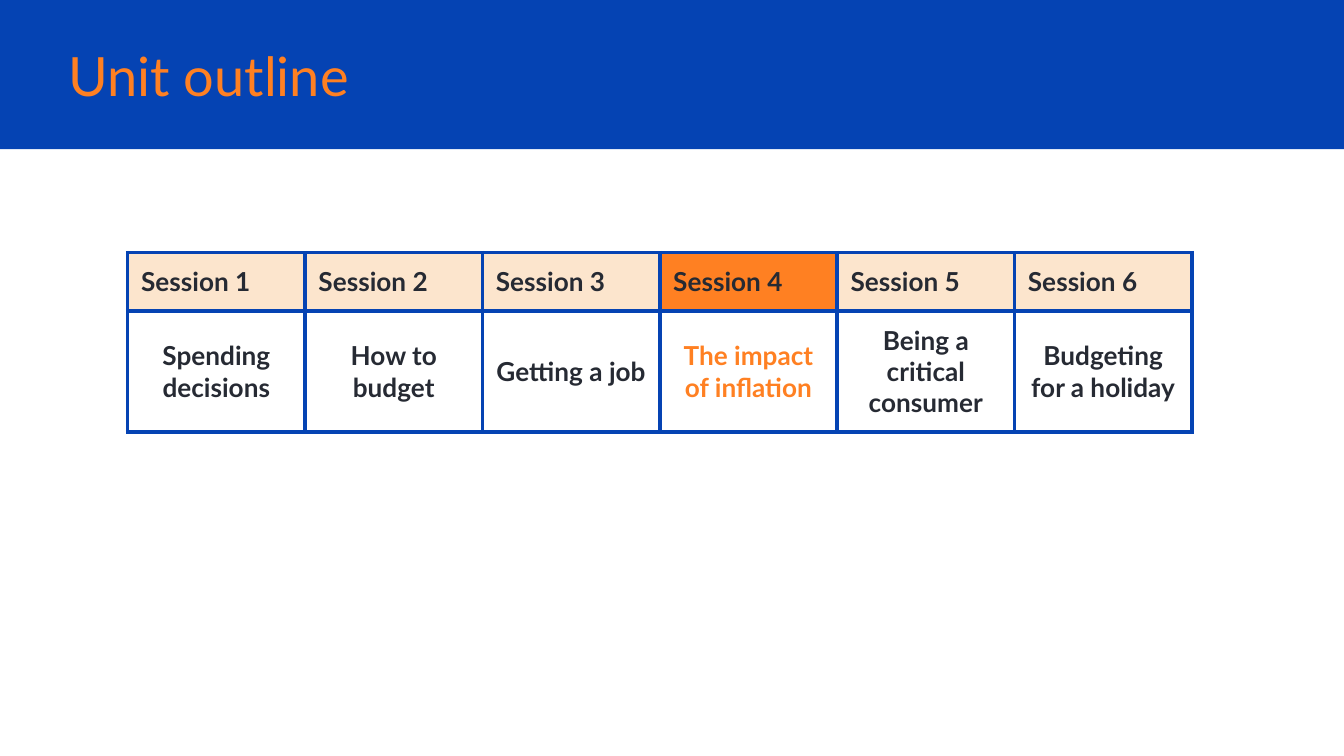
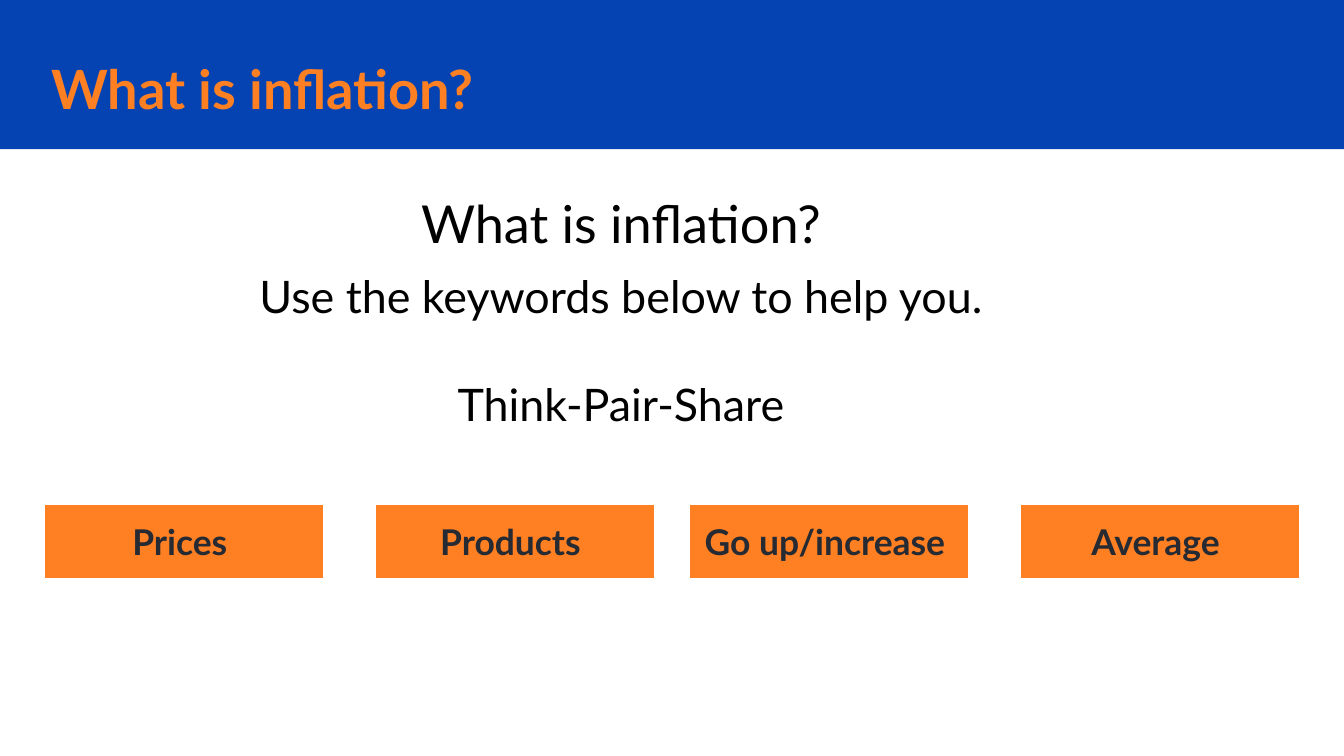
from dataclasses import dataclass

import pptx
import pptx.util
import pptx.oxml
import pptx.oxml.ns
import pptx.dml.color
import pptx.enum.shapes
import pptx.enum.text
from pptx.util import Inches, Pt

HUES = {
    "blue": "0543B3",
    "orange": "FF8022",
    "peach": "FCE5CD",
    "ink": "262A33",
    "black": "000000",
    "white": "FFFFFF",
}
FONT = "Lato"
PAD = Inches(0.1)
ALIGN = pptx.enum.text.PP_ALIGN
ANCHOR = pptx.enum.text.MSO_ANCHOR
RECT = pptx.enum.shapes.MSO_SHAPE.RECTANGLE


@dataclass(frozen=True)
class Box:
    left: float
    top: float
    width: float
    height: float

    def lengths(self) -> tuple:
        return tuple(Inches(n) for n in (self.left, self.top, self.width, self.height))


@dataclass(frozen=True)
class Style:
    size: float
    hue: str
    bold: bool = False
    align: ALIGN = ALIGN.CENTER


@dataclass(frozen=True)
class Session:
    topic: str
    current: bool = False


SESSIONS = (
    Session("Spending decisions"),
    Session("How to budget"),
    Session("Getting a job"),
    Session("The impact of inflation", current=True),
    Session("Being a critical consumer"),
    Session("Budgeting for a holiday"),
)
KEYWORDS = ("Prices ", "Products ", "Go up/increase ", "Average ")


def color(hue: str) -> pptx.dml.color.RGBColor:
    return pptx.dml.color.RGBColor.from_string(HUES[hue])


def paint(part, hue: str) -> None:
    part.fill.solid()
    part.fill.fore_color.rgb = color(hue)


def set_frame(frame, anchor) -> None:
    frame.word_wrap = True
    frame.auto_size = pptx.enum.text.MSO_AUTO_SIZE.NONE
    frame.vertical_anchor = anchor
    frame.margin_left = frame.margin_right = PAD
    frame.margin_top = frame.margin_bottom = PAD


def write(para, text: str, style: Style) -> None:
    para.alignment = style.align
    run = para.add_run()
    run.text = text
    run.font.name = FONT
    run.font.size = Pt(style.size)
    run.font.bold = style.bold
    run.font.color.rgb = color(style.hue)


def add_rect(slide, box: Box, hue: str):
    rect = slide.shapes.add_shape(RECT, *box.lengths())
    rect.shadow.inherit = False
    paint(rect, hue)
    rect.line.fill.background()
    return rect


def add_page(deck, title: str, box: Box, anchor, bold: bool = False):
    """Add a slide with the blue band behind its orange title."""
    slide = deck.slides.add_slide(deck.slide_layouts[5])
    band = add_rect(slide, Box(0, 0, 10, 1.11), "blue").element
    band.getparent().insert(2, band)
    head = slide.shapes.title
    head.left, head.top, head.width, head.height = box.lengths()
    set_frame(head.text_frame, anchor)
    write(head.text_frame.paragraphs[0], title, Style(29, "orange", bold, ALIGN.LEFT))
    return slide


def add_text(slide, box: Box, lines: tuple, size: float, gap: float = 0) -> None:
    """Add centred lines, with a gap in points between them."""
    frame = slide.shapes.add_textbox(*box.lengths()).text_frame
    set_frame(frame, ANCHOR.TOP)
    for i, line in enumerate(lines):
        para = frame.add_paragraph() if i else frame.paragraphs[0]
        if i:
            para.space_before = Pt(gap)
        write(para, line, Style(size, "black"))


def add_edges(cell) -> None:
    props = cell._tc.get_or_add_tcPr()
    for side in ("lnL", "lnR", "lnT", "lnB"):
        props.append(pptx.oxml.parse_xml(
            f'<a:{side} {pptx.oxml.ns.nsdecls("a")} w="{Pt(2.25)}">'
            f'<a:solidFill><a:srgbClr val="{HUES["blue"]}"/></a:solidFill>'
            f'</a:{side}>'))


def fill_cell(cell, text: str, style: Style, anchor) -> None:
    cell.margin_left = cell.margin_right = PAD
    cell.margin_top = cell.margin_bottom = PAD
    cell.vertical_anchor = anchor
    add_edges(cell)
    write(cell.text_frame.paragraphs[0], text, style)


def add_plan(slide) -> None:
    count = len(SESSIONS)
    box = Box(0.95, 1.88, 1.32 * count, 1.33)
    table = slide.shapes.add_table(2, count, *box.lengths()).table
    table.first_row = table.horz_banding = False
    for row, height in zip(table.rows, (0.43, 0.9)):
        row.height = Inches(height)
    for i, item in enumerate(SESSIONS):
        table.columns[i].width = Inches(1.32)
        head, body = table.cell(0, i), table.cell(1, i)
        fill_cell(head, f"Session {i + 1}", Style(14, "ink", True, ALIGN.LEFT), ANCHOR.TOP)
        paint(head, "orange" if item.current else "peach")
        hue = "orange" if item.current else "ink"
        fill_cell(body, item.topic, Style(14, hue, True), ANCHOR.MIDDLE)
        body.fill.background()


def add_keys(slide) -> None:
    """Draw the keywords as two pairs of boxes."""
    for i, word in enumerate(KEYWORDS):
        pair, side = divmod(i, 2)
        rect = add_rect(slide, Box(0.33 + 4.8 * pair + 2.46 * side, 3.75, 2.08, 0.56), "orange")
        rect.line.color.rgb = color("white")
        rect.line.width = Pt(0.75)
        set_frame(rect.text_frame, ANCHOR.MIDDLE)
        write(rect.text_frame.paragraphs[0], word, Style(19, "ink", True))


def main() -> None:
    deck = pptx.Presentation()
    deck.slide_width = Inches(10)
    deck.slide_height = deck.slide_width * 9 // 16

    plan = add_page(deck, "Unit outline", Box(0.41, 0.28, 8.46, 0.56), ANCHOR.MIDDLE)
    add_plan(plan)

    topic = "What is inflation?"
    task = add_page(deck, topic, Box(0.28, 0.24, 9.96, 0.69), ANCHOR.TOP, bold=True)
    task.shapes.title.text_frame.paragraphs[0].line_spacing = 1.15
    add_text(task, Box(0.69, 1.32, 7.86, 0.67), (topic,), 28)
    add_keys(task)
    lines = ("Use the keywords below to help you.", "Think-Pair-Share")
    add_text(task, Box(0.69, 1.9, 7.86, 1.41), lines, 24, gap=28.8)

    deck.save("out.pptx")


if __name__ == "__main__":
    main()
